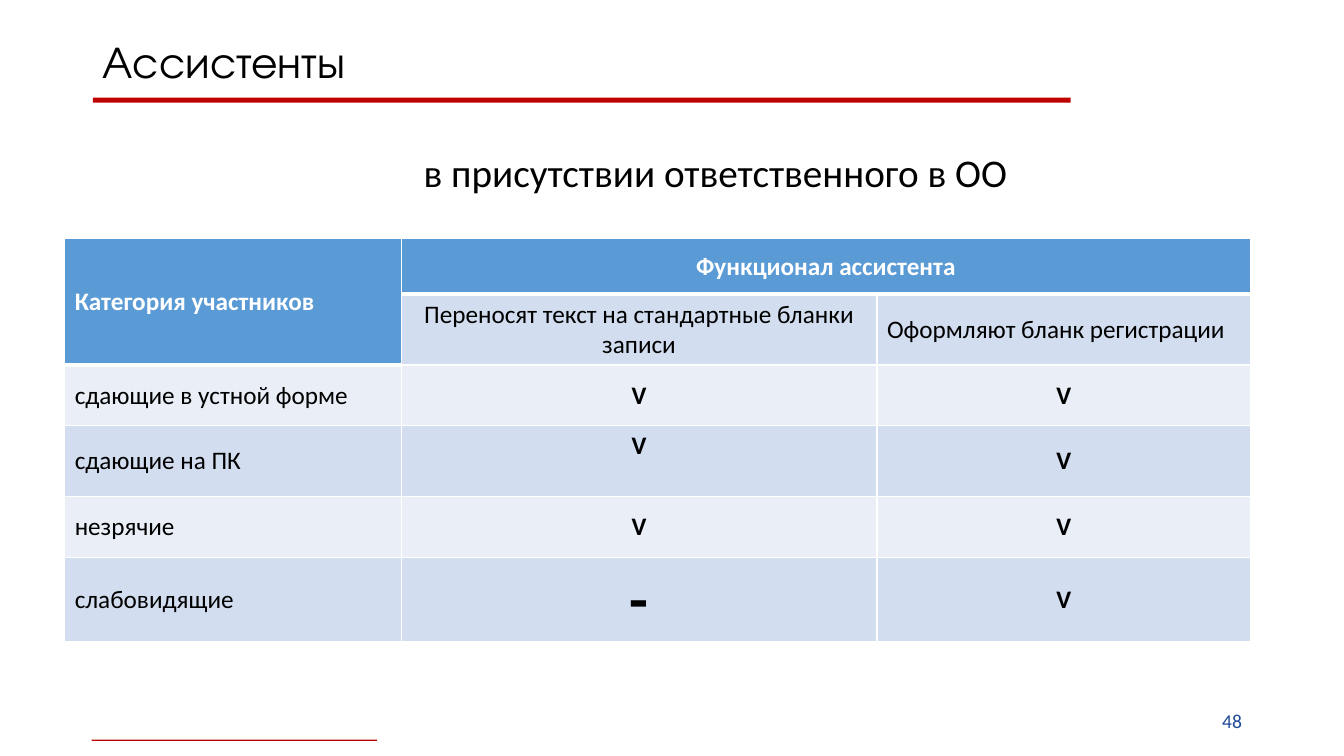
from lxml.etree import SubElement
from pptx import Presentation
from pptx.dml.color import RGBColor
from pptx.enum.shapes import MSO_SHAPE
from pptx.enum.text import MSO_ANCHOR as Anchor, PP_ALIGN as Align
from pptx.oxml.ns import qn
from pptx.util import Cm, Pt

BLACK = RGBColor(0x00, 0x00, 0x00)
WHITE = RGBColor(0xFF, 0xFF, 0xFF)
RED = RGBColor(0xC0, 0x00, 0x00)
NAVY = RGBColor(0x1D, 0x49, 0x99)
HEADER_BLUE = RGBColor(0x5B, 0x9B, 0xD5)
BAND_DARK = RGBColor(0xD2, 0xDE, 0xEF)
BAND_LIGHT = RGBColor(0xEA, 0xEF, 0xF7)

COLUMN_WIDTHS = (8.48, 11.99, 9.42)
ROW_HEIGHTS = (1.39, 1.79, 1.53, 1.79, 1.53, 2.11)
CATEGORIES = (
    ("сдающие в устной форме", "V", "V"),
    ("сдающие на ПК", "V", "V"),
    ("незрячие", "V", "V"),
    ("слабовидящие", "-", "V"),
)


def write(frame, text, size=18, font="Calibri", color=BLACK, bold=False,
          align=Align.LEFT, spacing=None):
    paragraph = frame.paragraphs[0]
    paragraph.alignment = align
    paragraph.line_spacing = spacing
    run = paragraph.add_run()
    run.text = text
    run.font.size = Pt(size)
    run.font.name = font
    run.font.bold = bold
    run.font.color.rgb = color


def add_bar(slide, left, top, width, height):
    bar = slide.shapes.add_shape(MSO_SHAPE.RECTANGLE, left, top, width, height)
    bar.shadow.inherit = False
    bar.fill.solid()
    bar.fill.fore_color.rgb = RED
    bar.line.fill.background()


def add_heading(slide, left, top, width, height):
    title = slide.shapes.title
    title.left, title.top, title.width, title.height = left, top, width, height
    title.text_frame.vertical_anchor = Anchor.MIDDLE
    write(title.text_frame, "Ассистенты", size=32, font="TeX Gyre Adventor",
          spacing=0.9)
    add_bar(slide, left, top + Cm(1.85), Cm(24.64), Cm(0.13))


def add_condition(slide, left, top, width, height):
    condition = slide.shapes.add_textbox(left, top, width, height)
    condition.text_frame.word_wrap = False
    write(condition.text_frame, "в присутствии ответственного в ОО", size=28,
          align=Align.CENTER)


def add_footer(slide, left, top, width, height):
    add_bar(slide, left, top + Cm(0.99), Cm(7.19), Cm(0.03))
    number = slide.shapes.add_textbox(left + width - Cm(7.62), top, Cm(7.62), height)
    number.text_frame.word_wrap = True
    number.text_frame.vertical_anchor = Anchor.MIDDLE
    write(number.text_frame, "48", size=14, color=NAVY, align=Align.RIGHT)


def set_borders(cell, bottom):
    """Draw white borders, with the bottom one of the given weight in points."""
    properties = cell._tc.get_or_add_tcPr()
    weights = {"a:lnL": 1, "a:lnR": 1, "a:lnT": 1, "a:lnB": bottom}
    for position, (tag, weight) in enumerate(weights.items()):
        line = SubElement(properties, qn(tag), w=str(Pt(weight)))
        fill = SubElement(line, qn("a:solidFill"))
        SubElement(fill, qn("a:srgbClr"), val=str(WHITE))
        properties.insert(position, line)


def fill_cell(cell, text, fill, anchor=Anchor.MIDDLE, **text_format):
    cell.fill.solid()
    cell.fill.fore_color.rgb = fill
    cell.vertical_anchor = anchor
    if text:
        write(cell.text_frame, text, **text_format)


def add_duties_table(slide, left, top, width, height):
    table = slide.shapes.add_table(len(ROW_HEIGHTS), len(COLUMN_WIDTHS),
                                   left, top, width, height).table
    for column, column_width in zip(table.columns, COLUMN_WIDTHS):
        column.width = Cm(column_width)
    for row, row_height in zip(table.rows, ROW_HEIGHTS):
        row.height = Cm(row_height)

    header = {"fill": HEADER_BLUE, "color": WHITE, "bold": True}
    fill_cell(table.cell(0, 0), "Категория участников", **header)
    fill_cell(table.cell(0, 1), "Функционал ассистента", align=Align.CENTER, **header)
    fill_cell(table.cell(1, 1), "Переносят текст на стандартные бланки записи",
              BAND_DARK, align=Align.CENTER)
    fill_cell(table.cell(1, 2), "Оформляют бланк регистрации", BAND_DARK)

    for row, (category, *marks) in enumerate(CATEGORIES, start=2):
        band = BAND_DARK if row % 2 else BAND_LIGHT
        fill_cell(table.cell(row, 0), category, band)
        for column, mark in enumerate(marks, start=1):
            raised = category == "сдающие на ПК" and column == 1
            fill_cell(table.cell(row, column), mark, band,
                      anchor=Anchor.TOP if raised else Anchor.MIDDLE,
                      size=44 if mark == "-" else 18, bold=True,
                      align=Align.CENTER)

    for row in range(len(ROW_HEIGHTS)):
        for column in range(len(COLUMN_WIDTHS)):
            under_header = row == 0 or (row, column) == (1, 0)
            set_borders(table.cell(row, column), bottom=3 if under_header else 1)
    table.cell(0, 0).merge(table.cell(1, 0))
    table.cell(0, 1).merge(table.cell(0, 2))


def main():
    deck = Presentation()
    deck.slide_width, deck.slide_height = Cm(33.87), Cm(19.05)
    slide = deck.slides.add_slide(deck.slide_layouts[5])
    add_heading(slide, Cm(2.34), Cm(0.61), Cm(29.21), Cm(2.01))
    add_condition(slide, Cm(10.34), Cm(3.61), Cm(15.37), Cm(1.45))
    add_duties_table(slide, Cm(1.63), Cm(6.02), Cm(sum(COLUMN_WIDTHS)),
                     Cm(sum(ROW_HEIGHTS)))
    add_footer(slide, Cm(2.31), Cm(17.65), Cm(29.24), Cm(1.02))
    deck.save("out.pptx")


if __name__ == "__main__":
    main()
